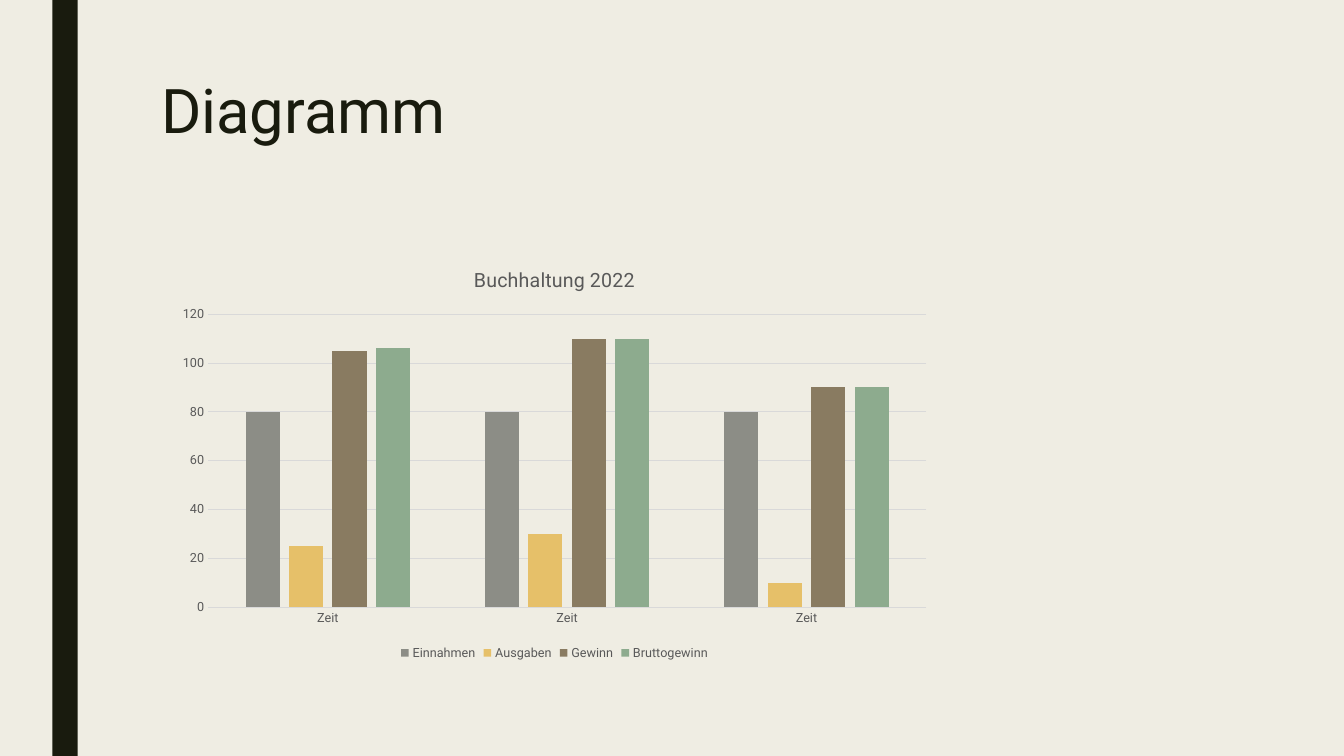
from dataclasses import dataclass
from typing import Any

from pptx import Presentation
from pptx import util as u
from pptx.chart.data import CategoryChartData
from pptx.dml.color import RGBColor
from pptx.enum import chart as charts, shapes, text

COLORS = {
    "background": "EFEDE3",
    "ink": "191B0E",
    "label": "595959",
    "grid": "D9D9D9",
    "income": "8C8D86",
    "expenses": "E6C069",
    "profit": "897B61",
    "gross": "8DAB8E",
}
FONT = "Roboto"


@dataclass(frozen=True)
class Account:
    name: str
    values: tuple[int, ...]
    color: str


PERIODS = ("Zeit", "Zeit", "Zeit")
ACCOUNTS = (
    Account("Einnahmen", (80, 80, 80), "income"),
    Account("Ausgaben", (25, 30, 10), "expenses"),
    Account("Gewinn", (105, 110, 90), "profit"),
    Account("Bruttogewinn", (106, 110, 90), "gross"),
)


def rgb(key: str) -> RGBColor:
    return RGBColor.from_string(COLORS[key])


def box(*inches: float) -> list[u.Length]:
    return [u.Inches(value) for value in inches]


def apply(target: Any, values: dict[str, Any]) -> None:
    for name, value in values.items():
        setattr(target, name, value)


def paint(fill: Any, color: str) -> None:
    fill.solid()
    fill.fore_color.rgb = rgb(color)


def style_font(font: Any, size: float, color: str) -> None:
    apply(font, {"name": FONT, "size": u.Pt(size), "bold": False})
    font.color.rgb = rgb(color)


def style_line(line: Any) -> None:
    line.color.rgb = rgb("grid")
    line.width = u.Pt(0.75)


def add_stripe(slide: Any) -> None:
    stripe = slide.shapes.add_shape(
        shapes.MSO_SHAPE.RECTANGLE, *box(0.52, 0, 0.25, 7.5))
    stripe.shadow.inherit = False
    paint(stripe.fill, "ink")
    stripe.line.fill.background()


def add_heading(slide: Any, wording: str) -> None:
    frame = slide.shapes.add_textbox(*box(1.5, 0.75, 10.5, 1.62)).text_frame
    apply(frame, {"word_wrap": True, "vertical_anchor": text.MSO_ANCHOR.TOP})
    heading = frame.paragraphs[0]
    heading.line_spacing = 0.89
    run = heading.add_run()
    run.text = wording
    style_font(run.font, 44, "ink")


def add_accounting_chart(slide: Any, caption: str) -> None:
    data = CategoryChartData()
    data.categories = PERIODS
    for account in ACCOUNTS:
        data.add_series(account.name, account.values)
    chart = slide.shapes.add_chart(
        charts.XL_CHART_TYPE.COLUMN_CLUSTERED,
        *box(1.66, 2.47, 7.68, 4.12), data).chart
    style_font(chart.font, 10, "label")

    # Columns
    plot = chart.plots[0]
    apply(plot, {"gap_width": 219, "overlap": -27, "vary_by_categories": False})
    for series, account in zip(plot.series, ACCOUNTS):
        paint(series.format.fill, account.color)

    # Caption and legend
    chart.has_title = True
    chart.chart_title.include_in_layout = False
    run = chart.chart_title.text_frame.paragraphs[0].add_run()
    run.text = caption
    style_font(run.font, 14, "label")
    chart.has_legend = True
    apply(chart.legend, {"position": charts.XL_LEGEND_POSITION.BOTTOM,
                         "include_in_layout": False})
    style_font(chart.legend.font, 9, "label")

    # Axes
    for axis in (chart.category_axis, chart.value_axis):
        apply(axis, {"major_tick_mark": charts.XL_TICK_MARK.NONE,
                     "minor_tick_mark": charts.XL_TICK_MARK.NONE})
        style_font(axis.tick_labels.font, 9, "label")
    style_line(chart.category_axis.format.line)
    apply(chart.value_axis, {"minimum_scale": 0, "maximum_scale": 120,
                             "major_unit": 20, "has_major_gridlines": True})
    chart.value_axis.format.line.fill.background()
    style_line(chart.value_axis.major_gridlines.format.line)


def main() -> None:
    deck = Presentation()
    apply(deck, {"slide_width": u.Inches(13.33), "slide_height": u.Inches(7.5)})
    slide = deck.slides.add_slide(deck.slide_layouts[6])
    paint(slide.background.fill, "background")
    add_stripe(slide)
    add_heading(slide, "Diagramm")
    add_accounting_chart(slide, "Buchhaltung 2022")
    deck.save("out.pptx")


if __name__ == "__main__":
    main()
